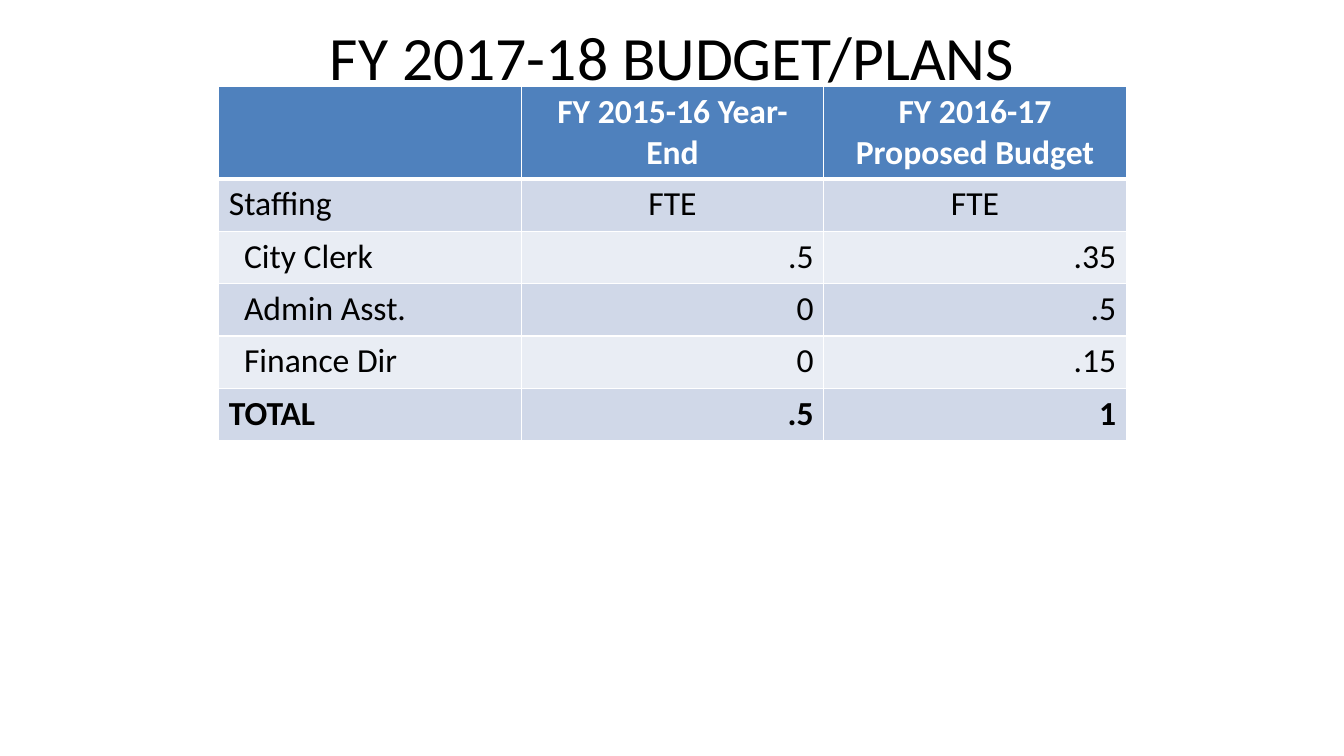
from dataclasses import dataclass

from lxml import etree
from pptx import Presentation
from pptx.dml.color import RGBColor
from pptx.enum.text import MSO_ANCHOR, PP_ALIGN
from pptx.oxml.ns import qn
from pptx.util import Inches, Pt

LEFT, CENTER, RIGHT = PP_ALIGN.LEFT, PP_ALIGN.CENTER, PP_ALIGN.RIGHT
MIDDLE = MSO_ANCHOR.MIDDLE
TITLE_ONLY = 5


@dataclass(frozen=True)
class Theme:
    font: str = "Calibri"
    title_size: int = 44
    table_size: int = 24
    text: str = "000000"
    white: str = "FFFFFF"
    header: str = "4F81BD"
    bands: tuple = ("D0D8E8", "E9EDF4")
    thin: int = 1
    thick: int = 3


THEME = Theme()
STAFFING = [
    ("", "FY 2015-16 Year- End", "FY 2016-17 Proposed Budget"),
    ("Staffing", "FTE", "FTE"),
    ("City Clerk", ".5", ".35"),
    ("Admin Asst.", "0", ".5"),
    ("Finance Dir", "0", ".15"),
    ("TOTAL", ".5", "1"),
]
TOTAL_ROW = len(STAFFING) - 1
POSITION_ROWS = range(2, TOTAL_ROW)


def style_text(frame, size, color, align, bold=False):
    for paragraph in frame.paragraphs:
        paragraph.alignment = align
        for run in paragraph.runs:
            run.font.name = THEME.font
            run.font.size = Pt(size)
            run.font.bold = bold
            run.font.color.rgb = RGBColor.from_string(color)


def add_title(slide, text):
    title = slide.shapes.title
    title.left, title.top = Inches(0.67), Inches(0.3)
    title.width, title.height = Inches(12), Inches(1.25)
    title.text_frame.text = text
    title.text_frame.vertical_anchor = MIDDLE
    style_text(title.text_frame, THEME.title_size, THEME.text, CENTER)


def set_borders(cell, top, bottom):
    properties = cell._tc.get_or_add_tcPr()
    sides = {"L": THEME.thin, "R": THEME.thin, "T": top, "B": bottom}
    for position, (side, width) in enumerate(sides.items()):
        line = etree.Element(qn(f"a:ln{side}"), w=str(Pt(width)))
        fill = etree.SubElement(line, qn("a:solidFill"))
        etree.SubElement(fill, qn("a:srgbClr"), val=THEME.white)
        properties.insert(position, line)


def format_cell(cell, row, column, text):
    is_header = row == 0
    cell.fill.solid()
    fill = THEME.header if is_header else THEME.bands[(row - 1) % 2]
    cell.fill.fore_color.rgb = RGBColor.from_string(fill)
    set_borders(
        cell,
        top=THEME.thick if row == 1 else THEME.thin,
        bottom=THEME.thick if is_header else THEME.thin,
    )
    if column == 0:
        align = LEFT
        if row in POSITION_ROWS:
            cell.margin_left = Inches(0.25)
    else:
        align = CENTER if row < 2 else RIGHT
    cell.text_frame.text = text
    color = THEME.white if is_header else THEME.text
    style_text(cell.text_frame, THEME.table_size, color, align,
               bold=row in (0, TOTAL_ROW))


def add_staffing_table(slide, rows):
    table = slide.shapes.add_table(
        len(rows), len(rows[0]),
        Inches(2.17), Inches(0.86), Inches(9), Inches(3.5),
    ).table
    table.horz_banding = False
    for column in table.columns:
        column.width = Inches(3)
    for row, labels in enumerate(rows):
        table.rows[row].height = Inches(0.52 if row else 0.9)
        for column, text in enumerate(labels):
            format_cell(table.cell(row, column), row, column, text)


def main():
    deck = Presentation()
    deck.slide_width, deck.slide_height = Inches(13.33), Inches(7.5)
    slide = deck.slides.add_slide(deck.slide_layouts[TITLE_ONLY])
    add_title(slide, "FY 2017-18 BUDGET/PLANS\v")
    add_staffing_table(slide, STAFFING)
    deck.save("out.pptx")


if __name__ == "__main__":
    main()
